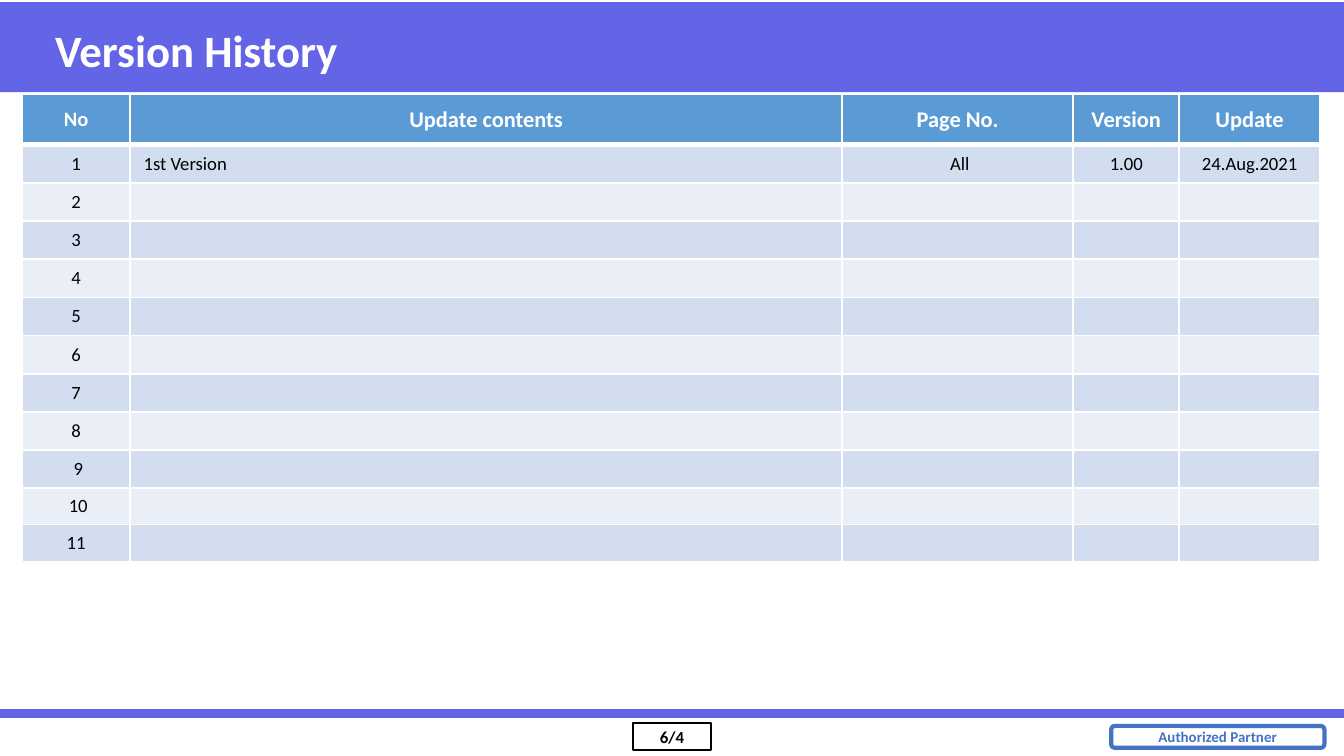
from dataclasses import dataclass
from typing import Optional

from lxml.etree import SubElement as Sub
from pptx import Presentation
from pptx.dml.color import RGBColor as Rgb
from pptx.enum.shapes import MSO_CONNECTOR as Conn, MSO_SHAPE as Kind
from pptx.enum.text import MSO_ANCHOR as Anchor, MSO_AUTO_SIZE as Fit, PP_ALIGN as Align
from pptx.oxml.ns import qn
from pptx.util import Pt


@dataclass(frozen=True)
class Theme:
    font: str = "Calibri"
    brand: str = "6464E6"
    badge: str = "4472C4"
    head: str = "5B9BD5"
    odd: str = "D2DEEF"
    even: str = "EAEFF7"
    white: str = "FFFFFF"
    black: str = "000000"
    title: float = 24
    label: float = 12
    first: float = 11
    body: float = 10
    page: float = 9
    small: float = 8


@dataclass(frozen=True)
class Style:
    size: float
    color: str
    bold: bool = False
    align: Align = Align.CENTER


@dataclass(frozen=True)
class Box:
    kind: Kind
    left: float
    top: float
    width: float
    height: float
    fill: Optional[str] = None
    line: Optional[str] = None
    weight: float = 1
    text: str = ""
    style: Optional[Style] = None
    inset: float = 7.2
    wrap: bool = True


T = Theme()

# Slide furniture
BOXES = (
    Box(Kind.RECTANGLE, 0, 1.2, 720, 48.2, fill=T.brand),
    Box(Kind.RECTANGLE, 339.1, 387.3, 41.8, 14.7, line=T.black, text="6/4",
        style=Style(T.page, T.black, True), inset=2.2),
    Box(Kind.ROUNDED_RECTANGLE, 595.3, 388.9, 114.2, 11.7, line=T.badge,
        weight=2.25, text="Authorized Partner",
        style=Style(T.small, T.badge, True), wrap=False),
)

# Table content and grid
HEADS = ("No", "Update contents", "Page No.", "Version", "Update")
FIRST = ("1", "1st Version", " All", "1.00", "24.Aug.2021")
MARKS = ("2", "3", "4", "5", "6", "7", "8", " 9", " 10", "11")
ROWS = (HEADS, FIRST, *((mark, "", "", "", "") for mark in MARKS))
COLS = (58, 381.4, 123.8, 56.8, 75.4)
TALL = (26.9, *[20.45] * 9, 19.5, 19.8)


def write(frame, text: str, style: Style) -> None:
    para = frame.paragraphs[0]
    para.alignment = style.align
    run = para.add_run()
    run.text = text
    font = run.font
    font.name, font.size, font.bold = T.font, Pt(style.size), style.bold
    font.color.rgb = Rgb.from_string(style.color)


def draw(shapes, box: Box) -> None:
    shape = shapes.add_shape(box.kind, Pt(box.left), Pt(box.top),
                             Pt(box.width), Pt(box.height))
    shape.shadow.inherit = False
    if box.fill:
        shape.fill.solid()
        shape.fill.fore_color.rgb = Rgb.from_string(box.fill)
    else:
        shape.fill.background()
    if box.line:
        shape.line.color.rgb = Rgb.from_string(box.line)
        shape.line.width = Pt(box.weight)
    else:
        shape.line.fill.background()
    if box.style:
        frame = shape.text_frame
        frame.word_wrap = box.wrap
        frame.vertical_anchor = Anchor.MIDDLE
        frame.margin_left = frame.margin_right = Pt(box.inset)
        frame.margin_top = frame.margin_bottom = Pt(min(box.inset, 3.6))
        write(frame, box.text, box.style)


def rule(shapes, top: float) -> None:
    line = shapes.add_connector(Conn.STRAIGHT, Pt(0), Pt(top), Pt(720), Pt(top))
    line.line.color.rgb = Rgb.from_string(T.brand)
    line.line.width = Pt(4.5)
    Sub(line._element.spPr, qn("a:effectLst"))


def edge(cell, side: str, width: float) -> None:
    line = Sub(cell._tc.get_or_add_tcPr(), qn(f"a:{side}"), w=str(Pt(width)))
    Sub(Sub(line, qn("a:solidFill")), qn("a:srgbClr"), val=T.white)


def look(row: int, col: int) -> Style:
    if row == 0:
        return Style(T.label if col else T.first, T.white, True)
    return Style(T.body, T.black, align=Align.LEFT if col == 1 else Align.CENTER)


def paint(cell, text: str, row: int, col: int) -> None:
    # Borders come before the fill in the cell properties
    for side in ("lnL", "lnR", "lnT", "lnB"):
        thick = (row, side) in ((0, "lnB"), (1, "lnT"))
        edge(cell, side, 3 if thick else 1)
    cell.fill.solid()
    tint = T.head if row == 0 else T.odd if row % 2 else T.even
    cell.fill.fore_color.rgb = Rgb.from_string(tint)
    cell.vertical_anchor = Anchor.MIDDLE
    if text:
        write(cell.text_frame, text, look(row, col))
    else:
        # Keeps an empty cell from growing its row
        Sub(cell.text_frame.paragraphs[0]._p, qn("a:endParaRPr"),
            sz=str(int(T.body * 100)))


def grid(shapes) -> None:
    table = shapes.add_table(len(ROWS), len(COLS), Pt(11.8), Pt(50.7),
                             Pt(sum(COLS)), Pt(sum(TALL))).table
    for col, width in zip(table.columns, COLS):
        col.width = Pt(width)
    for row, height in zip(table.rows, TALL):
        row.height = Pt(height)
    for r, texts in enumerate(ROWS):
        for c, text in enumerate(texts):
            paint(table.cell(r, c), text, r, c)


def head(shapes, text: str) -> None:
    title = shapes.title
    title.left, title.top = Pt(22.3), Pt(5.8)
    title.width, title.height = Pt(666.7), Pt(41.8)
    frame = title.text_frame
    frame.auto_size = Fit.NONE
    frame.vertical_anchor = Anchor.MIDDLE
    write(frame, text, Style(T.title, T.white, True, Align.LEFT))
    # Bring the title in front of its band
    shapes.element.append(title.element)


def main() -> None:
    deck = Presentation()
    deck.slide_width, deck.slide_height = Pt(720), Pt(405)
    shapes = deck.slides.add_slide(deck.slide_layouts[5]).shapes
    for box in BOXES:
        draw(shapes, box)
    rule(shapes, 382.3)
    head(shapes, "Version History")
    grid(shapes)
    deck.save("out.pptx")


if __name__ == "__main__":
    main()
